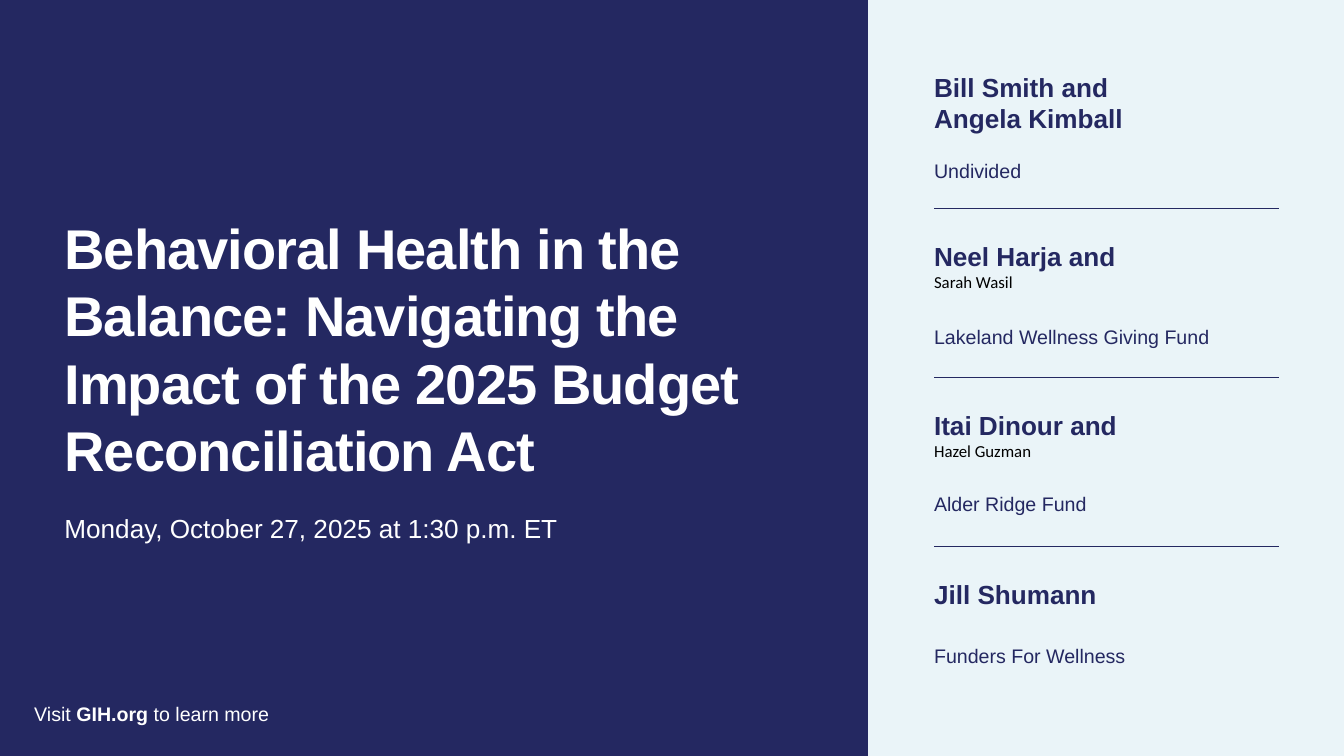
import dataclasses

import pptx
import pptx.dml.color
import pptx.enum.shapes
import pptx.enum.text
import pptx.oxml
import pptx.oxml.ns
import pptx.util

Pt = pptx.util.Pt


@dataclasses.dataclass(frozen=True)
class Theme:
    font: str = "Arial"
    navy: str = "242861"
    pale: str = "EAF4F8"
    white: str = "FFFFFF"
    title: int = 60
    head: int = 28
    body: int = 21


THEME = Theme()

LEFT = 1000.8
WIDTH = 369.36
STEP = 181

GUESTS = [
    ("Bill Smith and Angela Kimball", 254.16, 66.24, "Undivided", 165.6),
    ("Neel Harja and \nSarah Wasil", WIDTH, 66.24,
     "Lakeland Wellness Giving Fund", 344.16),
    ("Itai Dinour and \nHazel Guzman", WIDTH, 66.24,
     "Alder Ridge Fund", 522.72),
    ("Jill Shumann", WIDTH, 32.4, "Funders For Wellness", 685.44),
]


def color(code):
    return pptx.dml.color.RGBColor.from_string(code)


def add_panel(slide, left, top, width, height, fill):
    panel = slide.shapes.add_shape(
        pptx.enum.shapes.MSO_SHAPE.RECTANGLE,
        Pt(left), Pt(top), Pt(width), Pt(height))
    panel.shadow.inherit = False
    panel.fill.solid()
    panel.fill.fore_color.rgb = color(fill)
    panel.line.fill.background()


def add_rule(slide, left, top, width):
    rule = slide.shapes.add_connector(
        pptx.enum.shapes.MSO_CONNECTOR.STRAIGHT,
        Pt(left), Pt(top), Pt(left + width), Pt(top))
    rule.line.color.rgb = color(THEME.navy)
    rule.line.width = Pt(0.75)
    props = rule._element.spPr
    props.append(pptx.oxml.parse_xml(
        "<a:effectLst %s/>" % pptx.oxml.ns.nsdecls("a")))


def add_text(slide, box, text, size, ink, lead, bold=False):
    shape = slide.shapes.add_textbox(*[Pt(side) for side in box])
    frame = shape.text_frame
    frame.word_wrap = True
    frame.auto_size = pptx.enum.text.MSO_AUTO_SIZE.SHAPE_TO_FIT_TEXT
    frame.margin_left = frame.margin_right = 0
    frame.margin_top = frame.margin_bottom = 0
    frame.text = text
    para = frame.paragraphs[0]
    para.line_spacing = Pt(lead)
    for run in para.runs:
        style(run, size, ink, bold)
    return para


def style(run, size, ink, bold):
    run.font.name = THEME.font
    run.font.size = Pt(size)
    run.font.color.rgb = color(ink)
    run.font.bold = bold


def add_title(slide):
    para = add_text(
        slide, (69.12, 228.96, 761.04, 290.88),
        "Behavioral Health in the Balance: Navigating the Impact "
        "of the 2025 Budget Reconciliation Act",
        THEME.title, THEME.white, 72, True)
    for run in para.runs:
        run._r.get_or_add_rPr().set("spc", "-100")
    add_text(slide, (69.12, 542.88, 761.04, 36),
             "Monday, October 27, 2025 at 1:30 p.m. ET",
             THEME.head, THEME.white, 39.2)


def add_guests(slide):
    for row, (names, width, height, group, low) in enumerate(GUESTS):
        add_text(slide, (LEFT, 76.5 + row * STEP, width, height),
                 names, THEME.head, THEME.navy, 33.6, True)
        add_text(slide, (LEFT, low, WIDTH, 26.64),
                 group, THEME.body, THEME.navy, 29.4)
        if row < len(GUESTS) - 1:
            add_rule(slide, LEFT, 223.75 + row * STEP, WIDTH)


def add_footer(slide):
    para = add_text(slide, (36.72, 748.08, 412.56, 31.68), "Visit ",
                    THEME.body, THEME.white, 29.4)
    for text, bold in (("GIH.org ", True), ("to learn more", False)):
        run = para.add_run()
        run.text = text
        style(run, THEME.body, THEME.white, bold)


def main():
    deck = pptx.Presentation()
    deck.slide_width = Pt(1440)
    deck.slide_height = Pt(810)
    slide = deck.slides.add_slide(deck.slide_layouts[6])
    slide.background.fill.solid()
    slide.background.fill.fore_color.rgb = color(THEME.navy)
    add_panel(slide, 930.24, 0, 509.76, 810, THEME.pale)
    add_title(slide)
    add_guests(slide)
    add_footer(slide)
    deck.save("out.pptx")


if __name__ == "__main__":
    main()
